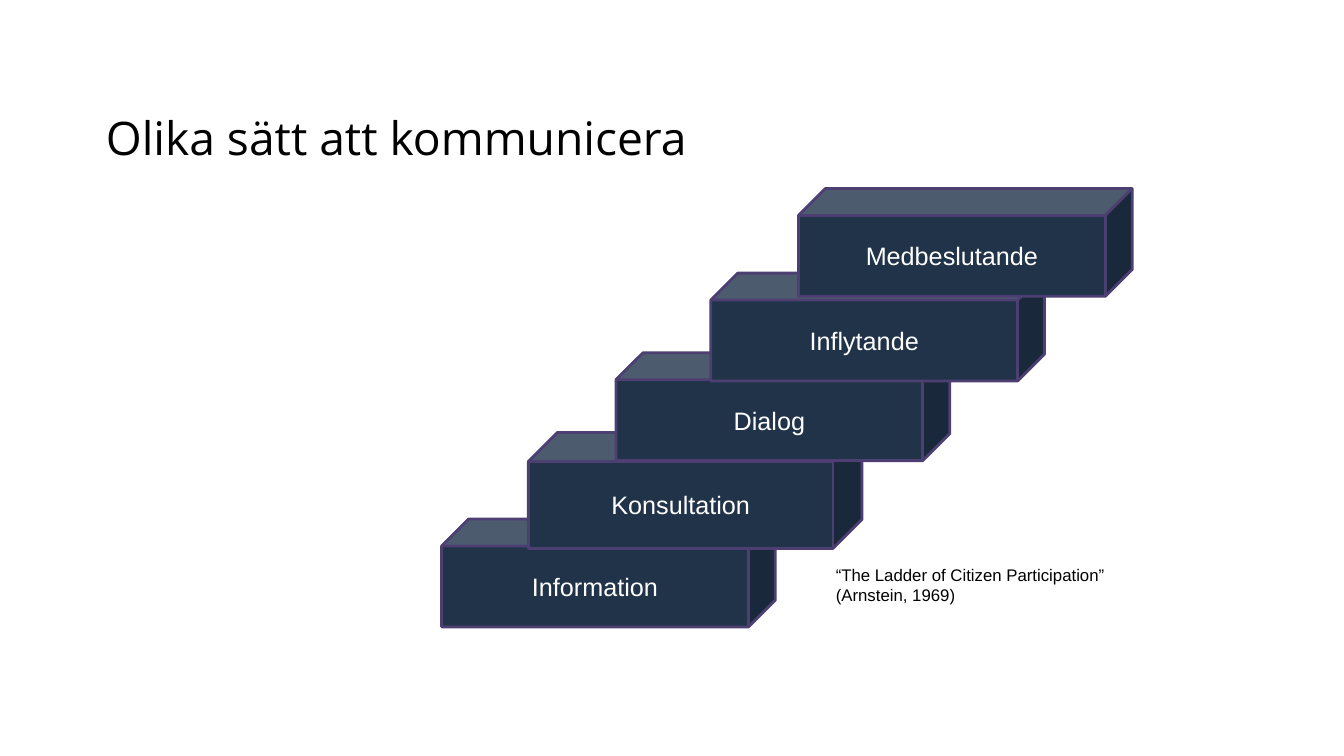
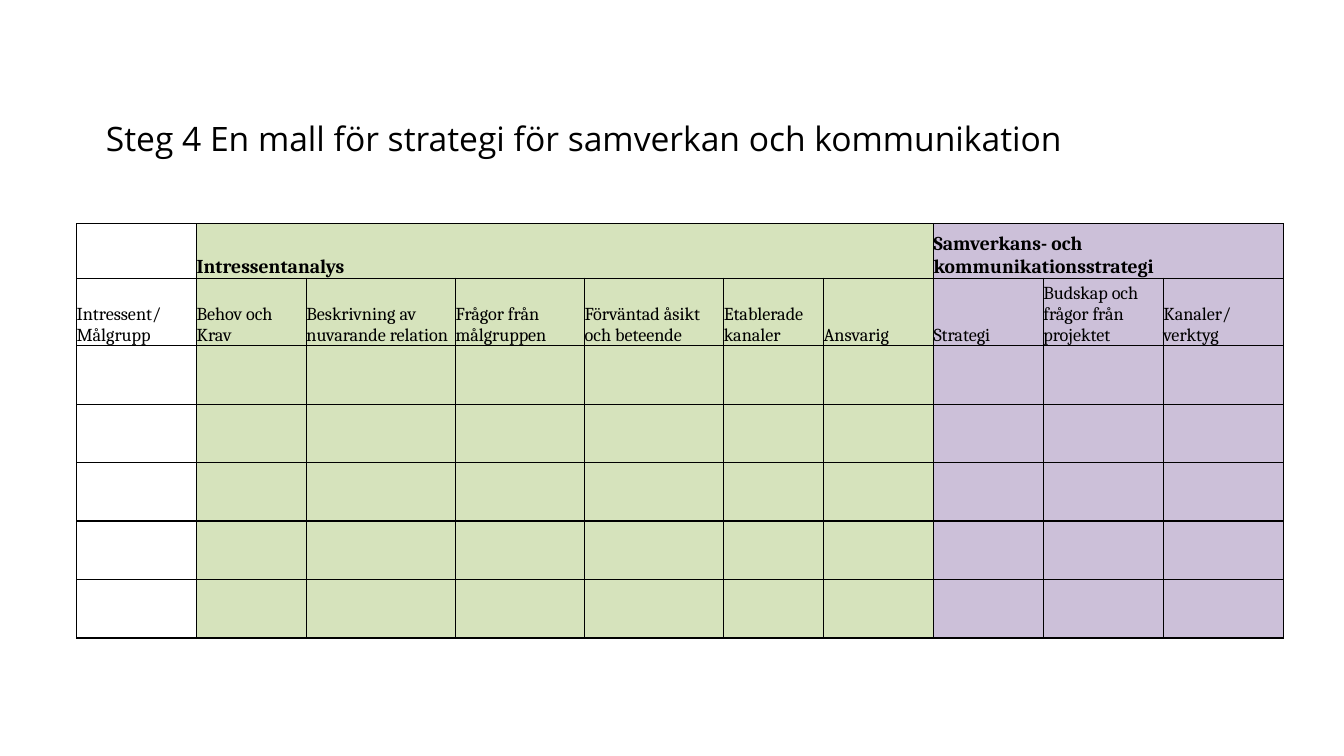
"""Build two slides on ways to communicate and a strategy template."""
from copy import deepcopy

from pptx import Presentation
from pptx.dml.color import RGBColor
from pptx.enum.shapes import MSO_SHAPE
from pptx.enum.text import MSO_ANCHOR, PP_ALIGN
from pptx.oxml import parse_xml
from pptx.oxml.ns import nsdecls, qn
from pptx.util import Inches, Pt

CUBE = MSO_SHAPE.CUBE
MIDDLE, BOTTOM = MSO_ANCHOR.MIDDLE, MSO_ANCHOR.BOTTOM
LEFT, CENTER = PP_ALIGN.LEFT, PP_ALIGN.CENTER

COLORS = {
    "text": "000000",
    "light_text": "FFFFFF",
    "step": "203349",
    "step_line": "4E3F73",
    "analysis": "D6E3BC",
    "strategy": "CCC0D9",
}
TITLE_BOX = (0.92, 0.84, 11.5, 1.1)
TITLE_ONLY = 5

STEP_WIDTH = 3.31
STEPS = [
    ("Information", 4.38, 5.15, 1.07),
    ("Konsultation", 5.24, 4.29, 1.15),
    ("Dialog", 6.11, 3.5, 1.07),
    ("Inflytande", 7.05, 2.71, 1.07),
    ("Medbeslutande", 7.92, 1.87, 1.07),
]

COLUMN_WIDTHS = [1.19, 1.09, 1.48, 1.28, 1.38, 0.99, 1.09, 1.09, 1.19, 1.19]
ROW_HEIGHTS = [0.54, 0.67] + [0.58] * 5
COLUMN_FILLS = [None] + ["analysis"] * 6 + ["strategy"] * 3
GROUPS = [("Intressentanalys", 1, 6), ("Samverkans- och kommunikationsstrategi", 7, 9)]
HEADINGS = [
    "Intressent/\nMålgrupp",
    "Behov och Krav",
    "Beskrivning av nuvarande relation",
    "Frågor från målgruppen",
    "Förväntad åsikt och beteende",
    "Etablerade kanaler",
    "Ansvarig",
    "Strategi",
    "Budskap och frågor från projektet",
    "Kanaler/\nverktyg",
]


def color(name):
    """Return the named colour."""
    return RGBColor.from_string(COLORS[name])


def write_text(frame, text, size, font="Arial", fill="text", bold=False,
               align=LEFT, spacing=None):
    """Write one formatted paragraph into a text frame."""
    paragraph = frame.paragraphs[0]
    paragraph.text = text
    paragraph.alignment = align
    if spacing:
        paragraph.line_spacing = spacing
    for run in paragraph.runs:
        run.font.name = font
        run.font.size = Pt(size)
        run.font.bold = bold
        run.font.color.rgb = color(fill)
    for line_break in paragraph._p.findall(qn("a:br")):
        line_break.insert(0, deepcopy(paragraph.runs[0]._r.rPr))


def set_frame(frame, anchor):
    """Set the shared insets, wrapping and anchor of a text frame."""
    frame.word_wrap = True
    frame.vertical_anchor = anchor
    frame.margin_left = frame.margin_right = Inches(0.13)
    frame.margin_top = frame.margin_bottom = Inches(0.07)


def add_titled_slide(presentation, text, size):
    """Add a slide with the shared title style."""
    slide = presentation.slides.add_slide(presentation.slide_layouts[TITLE_ONLY])
    title = slide.shapes.title
    title.left, title.top, title.width, title.height = map(Inches, TITLE_BOX)
    set_frame(title.text_frame, MIDDLE)
    write_text(title.text_frame, text, size, font="Open Sans", spacing=0.9)
    return slide


def add_step(group, text, left, top, width, height):
    """Add one step of the staircase."""
    step = group.shapes.add_shape(CUBE, *map(Inches, (left, top, width, height)))
    step.shadow.inherit = False
    step.adjustments[0] = 0.25
    step.fill.solid()
    step.fill.fore_color.rgb = color("step")
    step.line.color.rgb = color("step_line")
    step.line.width = Pt(2)
    set_frame(step.text_frame, MIDDLE)
    write_text(step.text_frame, text, 18, fill="light_text", align=CENTER)


def add_note(slide, text, left, top, width, height):
    """Add the reference beside the staircase."""
    note = slide.shapes.add_textbox(*map(Inches, (left, top, width, height)))
    set_frame(note.text_frame, MSO_ANCHOR.TOP)
    write_text(note.text_frame, text, 12)


def format_cell(cell, fill):
    """Give a cell black borders, no margins and its column's fill."""
    properties = cell._tc.get_or_add_tcPr()
    for side in ("lnL", "lnR", "lnT", "lnB"):
        properties.append(parse_xml(
            f'<a:{side} {nsdecls("a")} w="{Pt(1)}"><a:solidFill>'
            f'<a:srgbClr val="{COLORS["text"]}"/></a:solidFill></a:{side}>'))
    cell.margin_left = cell.margin_right = cell.margin_top = cell.margin_bottom = 0
    cell.vertical_anchor = BOTTOM
    if fill:
        cell.fill.solid()
        cell.fill.fore_color.rgb = color(fill)
    else:
        cell.fill.background()


def add_strategy_table(slide, left, top):
    """Add the template table with its group and column headings."""
    size = sum(COLUMN_WIDTHS), sum(ROW_HEIGHTS)
    table = slide.shapes.add_table(len(ROW_HEIGHTS), len(COLUMN_WIDTHS),
                                   *map(Inches, (left, top, *size))).table
    table.first_row = table.horz_banding = False
    for column, width in zip(table.columns, COLUMN_WIDTHS):
        column.width = Inches(width)
    for row, height in zip(table.rows, ROW_HEIGHTS):
        row.height = Inches(height)
        for cell, fill in zip(row.cells, COLUMN_FILLS):
            format_cell(cell, fill)
    for text, first, last in GROUPS:
        cell = table.cell(0, first)
        cell.merge(table.cell(0, last))
        write_text(cell.text_frame, text, 14, font="Cambria", bold=True)
    for cell, text in zip(table.rows[1].cells, HEADINGS):
        write_text(cell.text_frame, text, 13, font="Cambria")


def build_staircase_slide(presentation):
    """Build the slide with the ladder of participation."""
    slide = add_titled_slide(presentation, "Olika sätt att kommunicera", 33)
    staircase = slide.shapes.add_group_shape()
    for text, left, top, height in STEPS:
        add_step(staircase, text, left, top, STEP_WIDTH, height)
    add_note(slide, "“The Ladder of Citizen Participation” (Arnstein, 1969)",
             8.16, 5.53, 3.07, 0.54)


def build_template_slide(presentation):
    """Build the slide with the strategy template."""
    slide = add_titled_slide(
        presentation, "Steg 4 En mall för strategi för samverkan och kommunikation", 24)
    add_strategy_table(slide, 0.76, 2.22)


def main():
    """Build and save the presentation."""
    presentation = Presentation()
    presentation.slide_width = Inches(13.33)
    presentation.slide_height = Inches(7.5)
    build_staircase_slide(presentation)
    build_template_slide(presentation)
    presentation.save("out.pptx")


if __name__ == "__main__":
    main()
